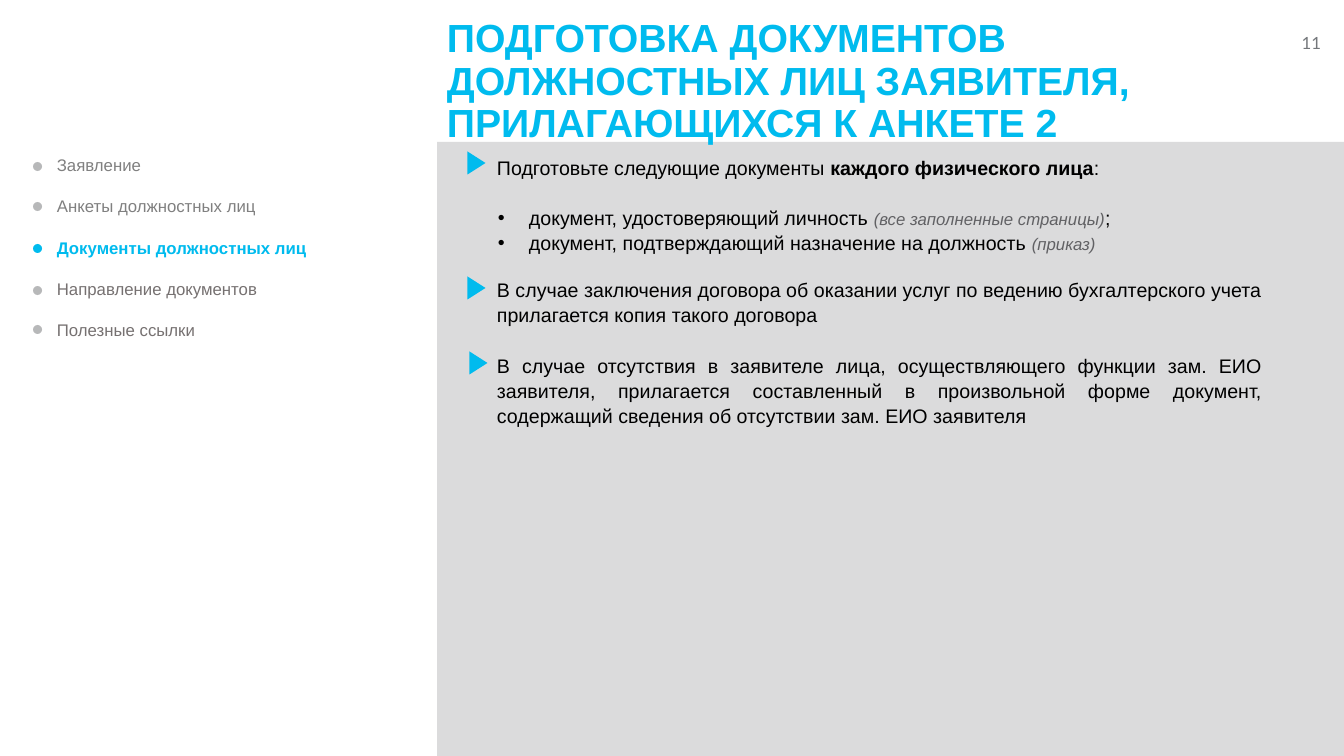
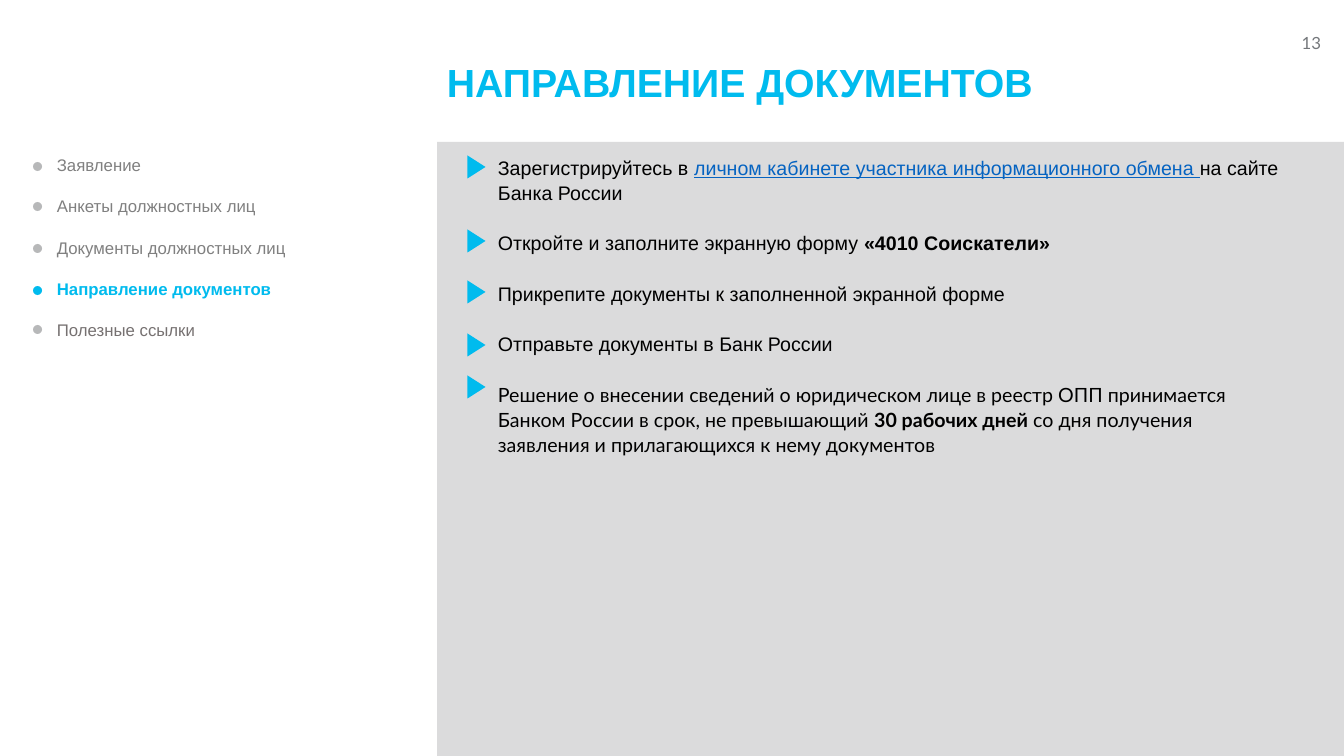
from lxml import etree
from pptx import Presentation
from pptx import util as u
from pptx.dml import color
from pptx.enum import shapes, text
from pptx.oxml import ns

SCALE = 914400 / 100.8
COLORS = {
    "accent": "00BBEE",
    "panel": "DBDBDC",
    "dot": "B7B8B9",
    "before": "808080",
    "after": "767171",
    "number": "74777B",
    "black": "000000",
    "note": "616164",
    "link": "0563C1",
}
TITLE = {"size": 28, "color": "accent", "bold": True}
BODY = {"size": 14, "color": "black"}
STRONG = {**BODY, "bold": True}
NOTE = {"size": 12, "color": "note", "italic": True}
LINK = {**BODY, "color": "link", "underline": True}
LATO = {**BODY, "name": "Lato"}
LATO_STRONG = {**LATO, "bold": True}
NUMBER = {"size": 12, "color": "number", "name": "Lato"}

LEFT, RIGHT, JUSTIFY = text.PP_ALIGN.LEFT, text.PP_ALIGN.RIGHT, text.PP_ALIGN.JUSTIFY
POINT = {"line_spacing": u.Pt(18), "margin": 50}
SPACED = {**POINT, "space_before": u.Pt(18)}
BULLET = {"line_spacing": u.Pt(18), "alignment": JUSTIFY, "margin": 82, "indent": -31}
SECTIONS = [
    "Заявление",
    "Анкеты должностных лиц",
    "Документы должностных лиц",
    "Направление документов",
    "Полезные ссылки",
]
DOT_TOPS = [162, 202, 244, 286, 325]

PAGES = [
    {
        "number": "11",
        "active": 2,
        "title": "ПОДГОТОВКА ДОКУМЕНТОВ ДОЛЖНОСТНЫХ ЛИЦ ЗАЯВИТЕЛЯ, ПРИЛАГАЮЩИХСЯ К АНКЕТЕ 2",
        "title_box": (437, 9, 896, 146),
        "body_box": (437, 149, 835, 311),
        "markers": [(465, 154), (465, 279), (467, 354)],
        "body": [
            (POINT, [("Подготовьте следующие документы ", BODY),
                     ("каждого физического лица", STRONG), (":", BODY)]),
            ({**BULLET, "space_before": u.Pt(18)},
             [("документ, удостоверяющий личность ", BODY),
              ("(все заполненные страницы)", NOTE), (";", BODY)]),
            (BULLET, [("документ, подтверждающий назначение на должность ", BODY),
                      ("(приказ)", NOTE)]),
            ({**SPACED, "space_before": u.Pt(15.4), "alignment": JUSTIFY},
             [("В случае заключения договора об оказании услуг по ведению бухгалтерского "
               "учета прилагается копия такого договора", BODY)]),
            ({**SPACED, "alignment": JUSTIFY},
             [("В случае отсутствия в заявителе лица, осуществляющего функции зам. ЕИО "
               "заявителя, прилагается составленный в произвольной форме документ, "
               "содержащий сведения об отсутствии зам. ЕИО заявителя", BODY)]),
        ],
    },
    {
        "number": "13",
        "active": 3,
        "title": "НАПРАВЛЕНИЕ ДОКУМЕНТОВ",
        "title_box": (437, 33, 906, 102),
        "body_box": (438, 149, 856, 352),
        "markers": [(465, top) for top in (158, 232, 283, 336, 378)],
        "body": [
            (POINT, [("Зарегистрируйтесь в ", BODY),
                     ("личном кабинете участника информационного обмена ", LINK),
                     ("на сайте Банка России", BODY)]),
            (SPACED, [("Откройте и заполните экранную форму ", BODY),
                      ("«4010 Соискатели»", STRONG)]),
            (SPACED, [("Прикрепите документы к заполненной экранной форме", BODY)]),
            (SPACED, [("Отправьте документы в Банк России", BODY)]),
            (SPACED, [("Решение о внесении сведений о юридическом лице в реестр ОПП "
                       "принимается Банком России в срок, не превышающий ", LATO),
                      ("30 рабочих дней", LATO_STRONG),
                      (" со дня получения заявления и прилагающихся к нему документов", LATO)]),
        ],
    },
]


def add_text(parent, box, paragraphs, anchor=text.MSO_ANCHOR.TOP):
    frame = parent.add_textbox(*[round(v * SCALE) for v in box]).text_frame
    frame.word_wrap = True
    frame.vertical_anchor = anchor
    for index, (layout, runs) in enumerate(paragraphs):
        paragraph = frame.add_paragraph() if index else frame.paragraphs[0]
        for key, value in layout.items():
            if key not in ("margin", "indent"):
                setattr(paragraph, key, value)
        properties = paragraph._p.get_or_add_pPr()
        properties.set("marL", str(round(layout.get("margin", 0) * SCALE)))
        properties.set("indent", str(round(layout.get("indent", 0) * SCALE)))
        if "indent" in layout:
            etree.SubElement(properties, ns.qn("a:buFont")).set("typeface", "Arial")
            etree.SubElement(properties, ns.qn("a:buChar")).set("char", "•")
        for words, style in runs:
            run = paragraph.add_run()
            run.text = words
            for key, value in {"name": "Arial", **style}.items():
                if key == "color":
                    run.font.color.rgb = color.RGBColor.from_string(COLORS[value])
                else:
                    setattr(run.font, key, u.Pt(value) if key == "size" else value)


def add_block(parent, kind, box, fill, rotation=0):
    block = parent.add_shape(kind, *[round(v * SCALE) for v in box])
    block.shadow.inherit = False
    block.fill.solid()
    block.fill.fore_color.rgb = color.RGBColor.from_string(COLORS[fill])
    block.line.fill.background()
    block.rotation = rotation


deck = Presentation()
deck.slide_width = round(1344 * SCALE)
deck.slide_height = round(756 * SCALE)

for page in PAGES:
    canvas = deck.slides.add_slide(deck.slide_layouts[6]).shapes
    add_text(canvas, (1087, 28, 244, 30),
             [({"alignment": RIGHT}, [(page["number"], NUMBER)])])
    add_block(canvas, shapes.MSO_SHAPE.RECTANGLE, (437, 142, 907, 614), "panel")
    add_text(canvas, page["body_box"], page["body"])
    for left, top in page["markers"]:
        add_block(canvas, shapes.MSO_SHAPE.ISOSCELES_TRIANGLE, (left, top, 23, 18), "accent", 90)
    add_text(canvas, page["title_box"],
             [({"line_spacing": u.Pt(30.4)}, [(page["title"], TITLE)])],
             text.MSO_ANCHOR.MIDDLE)

    navigation = canvas.add_group_shape().shapes
    entries = []
    for index, section in enumerate(SECTIONS):
        active = index == page["active"]
        tone = "accent" if active else "before" if index < page["active"] else "after"
        entries.append(({"line_spacing": u.Pt(14.4), "space_after": u.Pt(15)},
                        [(section, {"size": 12, "color": tone, "bold": active})]))
        add_block(navigation, shapes.MSO_SHAPE.OVAL, (33, DOT_TOPS[index], 9, 9),
                  "accent" if active else "dot")
    add_text(navigation, (47, 150, 372, 197), entries)

deck.save("out.pptx")
